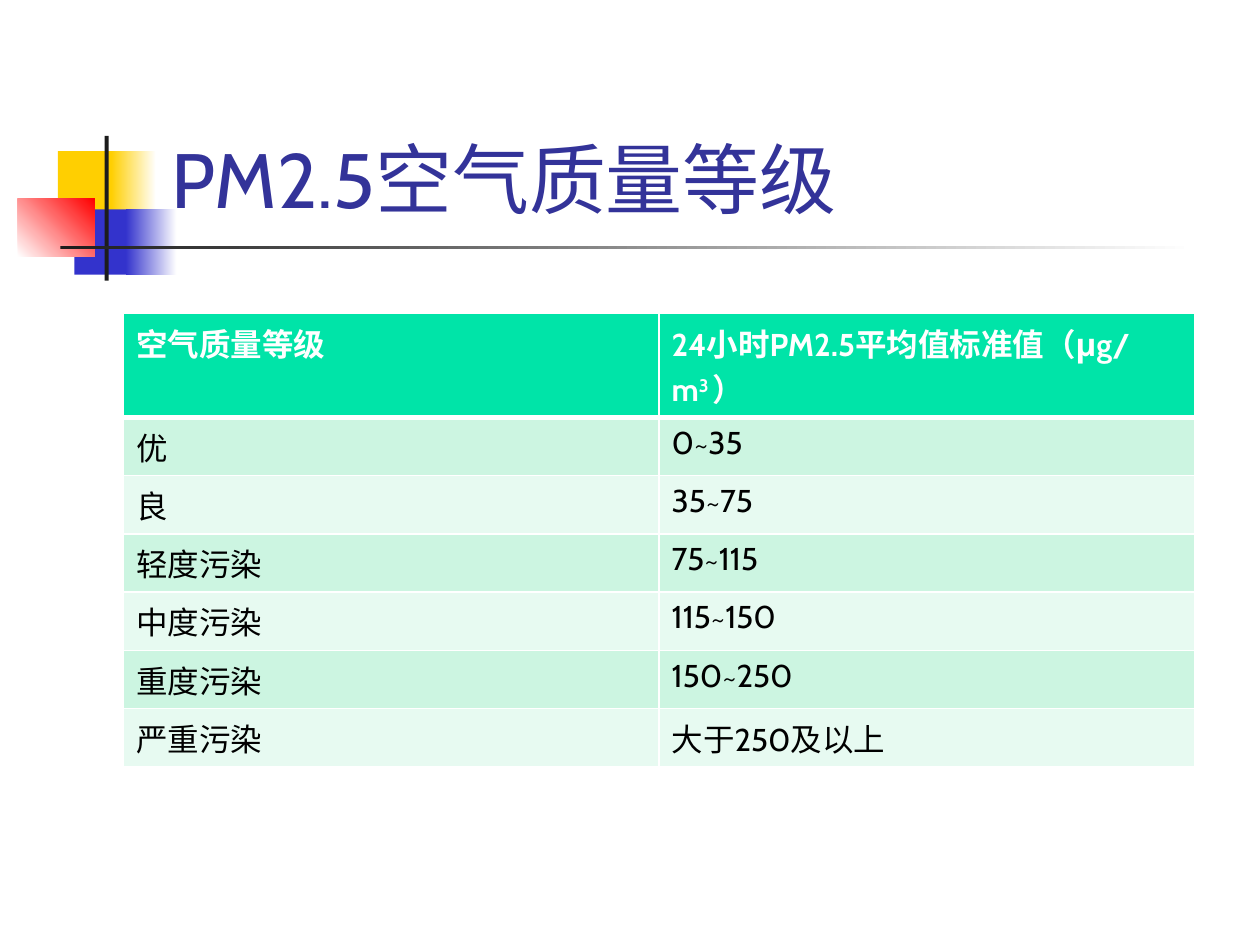
from typing import NamedTuple, Optional

import pptx
import pptx.dml.color
import pptx.enum.shapes
import pptx.enum.text
import pptx.oxml
import pptx.oxml.ns
import pptx.util
from pptx.dml.color import RGBColor
from pptx.util import Cm, Pt

FONT = "Cabin"
WHITE = RGBColor(0xFF, 0xFF, 0xFF)
BLACK = RGBColor(0x00, 0x00, 0x00)
YELLOW = RGBColor(0xFF, 0xCF, 0x01)
BLUE = RGBColor(0x33, 0x33, 0xCC)
RED = RGBColor(0xFF, 0x00, 0x00)
CHARCOAL = RGBColor(0x1C, 0x1C, 0x1C)
TITLE_BLUE = RGBColor(0x33, 0x33, 0x99)
HEADER_GREEN = RGBColor(0x00, 0xE4, 0xA8)
BANDS = (RGBColor(0xCC, 0xF5, 0xE1), RGBColor(0xE7, 0xFA, 0xF1))


class Block(NamedTuple):
    """A decorative rectangle, in centimetres; end makes it a gradient."""
    left: float
    top: float
    width: float
    height: float
    start: RGBColor
    end: Optional[RGBColor] = None
    angle: float = 0


BLOCKS = (
    Block(1.17, 3.05, 1.22, 1.32, YELLOW),
    Block(2.24, 3.05, 0.91, 1.32, YELLOW, WHITE),
    Block(1.5, 4.22, 1.17, 1.32, BLUE),
    Block(2.54, 4.22, 1.02, 1.32, BLUE, WHITE),
    Block(0.36, 4.01, 1.55, 1.17, WHITE, RED, 45),
    Block(2.11, 2.74, 0.08, 2.92, CHARCOAL),
    Block(1.22, 4.95, 22.86, 0.08, CHARCOAL, WHITE),
)

HEADINGS = ("空气质量等级", "24小时PM2.5平均值标准值（μg/m")
UNIT_POWER, UNIT_CLOSE = "3 ", "）"
LEVELS = (
    ("优", "0~35"),
    ("良", "35~75"),
    ("轻度污染", "75~115"),
    ("中度污染", "115~150"),
    ("重度污染", "150~250"),
    ("严重污染", "大于250及以上"),
)


def draw_block(slide, block: Block) -> None:
    shape = slide.shapes.add_shape(
        pptx.enum.shapes.MSO_SHAPE.RECTANGLE,
        *(Cm(length) for length in block[:4]))
    shape.shadow.inherit = False
    shape.line.fill.background()
    if block.end is None:
        shape.fill.solid()
        shape.fill.fore_color.rgb = block.start
        return
    shape.fill.gradient()
    shape.fill.gradient_angle = block.angle
    for stop, color in zip(shape.fill.gradient_stops, (block.start, block.end)):
        stop.color.rgb = color


def format_runs(paragraph, size: float, color: RGBColor, bold: bool = False) -> None:
    for run in paragraph.runs:
        run.font.name = FONT
        run.font.size = Pt(size)
        run.font.bold = bold
        run.font.color.rgb = color


def set_borders(cell, top: float, bottom: float) -> None:
    properties = cell._tc.get_or_add_tcPr()
    sides = (("lnL", 1), ("lnR", 1), ("lnT", top), ("lnB", bottom))
    for index, (side, width) in enumerate(sides):
        properties.insert(index, pptx.oxml.parse_xml(
            f'<a:{side} {pptx.oxml.ns.nsdecls("a")} w="{Pt(width)}">'
            f'<a:solidFill><a:srgbClr val="{WHITE}"/></a:solidFill></a:{side}>'))


def draw_table(slide) -> None:
    rows = (HEADINGS,) + LEVELS
    row_height = Cm(1.04)
    table = slide.shapes.add_table(
        len(rows), 2, Cm(2.49), Cm(6.32), Cm(21.59), row_height * len(rows)).table
    for row_index, texts in enumerate(rows):
        is_header = row_index == 0
        for column_index, text in enumerate(texts):
            cell = table.cell(row_index, column_index)
            cell.text_frame.text = text
            paragraph = cell.text_frame.paragraphs[0]
            if is_header and column_index == 1:
                power = paragraph.add_run()
                power.text = UNIT_POWER
                power.font._element.set("baseline", "30000")
                paragraph.add_run().text = UNIT_CLOSE
            format_runs(paragraph, 18, WHITE if is_header else BLACK, is_header)
            cell.fill.solid()
            cell.fill.fore_color.rgb = (
                HEADER_GREEN if is_header else BANDS[(row_index - 1) % 2])
            set_borders(cell, 3 if row_index == 1 else 1, 3 if is_header else 1)


def draw_title(slide) -> None:
    title = slide.shapes.title
    title.left, title.top = Cm(3.2), Cm(0.58)
    title.width, title.height = Cm(21.64), Cm(4.06)
    frame = title.text_frame
    frame.text = "PM2.5空气质量等级"
    frame.word_wrap = True
    frame.auto_size = pptx.enum.text.MSO_AUTO_SIZE.NONE
    frame.vertical_anchor = pptx.enum.text.MSO_ANCHOR.BOTTOM
    paragraph = frame.paragraphs[0]
    paragraph.alignment = pptx.enum.text.PP_ALIGN.LEFT
    format_runs(paragraph, 44, TITLE_BLUE)
    # Bring the title in front of the decoration
    slide.shapes._spTree.append(title._element)


def main() -> None:
    presentation = pptx.Presentation()
    presentation.slide_width, presentation.slide_height = Cm(25.4), Cm(19.05)
    title_only = presentation.slide_layouts[5]
    slide = presentation.slides.add_slide(title_only)

    # Decoration beside and below the title
    for block in BLOCKS:
        draw_block(slide, block)

    # Title and air quality table
    draw_title(slide)
    draw_table(slide)
    presentation.save("out.pptx")


if __name__ == "__main__":
    main()
